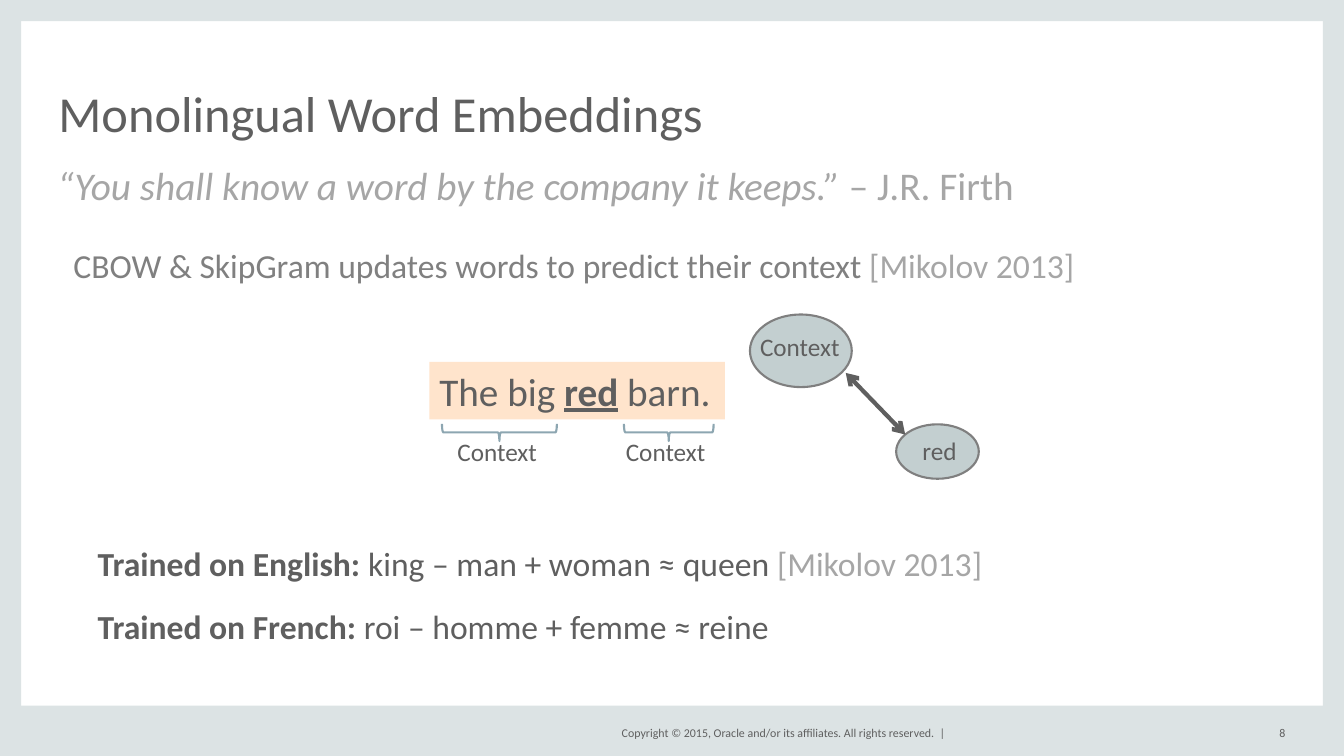
from lxml.etree import SubElement
from pptx import Presentation
from pptx.dml.color import RGBColor
from pptx.enum.shapes import MSO_CONNECTOR, MSO_SHAPE
from pptx.enum.text import MSO_ANCHOR, PP_ALIGN
from pptx.oxml.ns import qn
from pptx.util import Inches, Pt

FONT = "Calibri"
COLORS = {
    "frame": "DCE3E4", "text": "5F5F5F", "body": "808080", "muted": "A6A6A6",
    "highlight": "FFE4CC", "brace": "8DA6B1", "bubble": "C3CFD0", "outline": "7F7F7F",
}
PADDED = (0.1, 0.05, 0.1, 0.05)
LABEL = (0.1, 0.05, 0, 0.05)
FLUSH = (0, 0, 0, 0)

# Boxes are left, top, width, height in percent of the slide.
FRAME = [(0, 0, 1.58, 100), (98.42, 0, 1.58, 100), (0, 93.33, 100, 6.67), (0, 0, 100, 2.8)]
TITLE = ((4.35, 5.87, 91.28, 12.93), [("Monolingual Word Embeddings", "text", "")])
FOOTERS = [
    ((44.1, 95.6, 26.25, 2.67),
     "Copyright © 2015, Oracle and/or its affiliates. All rights reserved.  |"),
    ((92.48, 95.6, 3.15, 2.67), "8"),
]
STATEMENTS = [
    ((3.53, 20.67, 74.25, 7.6), 28,
     [("“You shall know a word by the company it keeps.” ", "muted", "i"),
      ("– J.R. Firth", "muted", "")]),
    ((4.73, 31.73, 77.18, 6.67), 24,
     [("CBOW & SkipGram updates words to predict their context ", "body", ""),
      ("[Mikolov 2013]", "muted", "")]),
    ((6.53, 71.2, 68.25, 6.67), 24,
     [("Trained on English: ", "text", "b"), ("king – man + woman ≈ queen ", "text", ""),
      ("[Mikolov 2013]", "muted", "")]),
    ((6.53, 79.47, 68.25, 6.67), 24,
     [("Trained on French: ", "text", "b"), ("roi – homme + femme ≈ reine", "text", "")]),
]
SENTENCE = ((31.95, 47.87, 21.98, 7.6),
            [("The big ", "text", ""), ("red", "text", "bu"), (" barn.", "text", "")])
BRACE_CENTER, BRACE_THICKNESS = 57.2, 1.28
BRACES = [(37.16, 15.2, 33.3), (49.76, 11.87, 45.83)]
BUBBLES = [
    ((55.8, 41.6, 7.58, 9.6), (56.55, 44.27, 7.2, 8.67), "Context"),
    ((66.68, 56.13, 6.15, 7.2), (68.63, 58, 4.2, 4.27), "red"),
]
ARROW = (62.93, 49.33, 67.35, 57.47)

presentation = Presentation()
presentation.slide_width = Inches(13.33)
presentation.slide_height = Inches(7.5)
slide = presentation.slides.add_slide(presentation.slide_layouts[6])


def color(name):
    return RGBColor.from_string(COLORS[name])


def place(box):
    sides = (presentation.slide_width, presentation.slide_height) * 2
    return [round(share * side / 100) for share, side in zip(box, sides)]


def add_shape(kind, box, fill=None, line=None):
    shape = slide.shapes.add_shape(kind, *place(box))
    shape.shadow.inherit = False
    if fill:
        shape.fill.solid()
        shape.fill.fore_color.rgb = color(fill)
    else:
        shape.fill.background()
    if line:
        shape.line.color.rgb = color(line)
        shape.line.width = Pt(1.5)
    else:
        shape.line.fill.background()
    return shape


def write(shape, runs, size, insets=PADDED, anchor=MSO_ANCHOR.TOP,
          align=PP_ALIGN.LEFT, spacing=1.0):
    frame = shape.text_frame
    frame.word_wrap = True
    frame.vertical_anchor = anchor
    (frame.margin_left, frame.margin_top,
     frame.margin_right, frame.margin_bottom) = map(Inches, insets)
    paragraph = frame.paragraphs[0]
    paragraph.alignment = align
    paragraph.line_spacing = spacing
    for text, tone, style in runs:
        run = paragraph.add_run()
        run.text = text
        run.font.name = FONT
        run.font.size = Pt(size)
        run.font.color.rgb = color(tone)
        run.font.bold = "b" in style
        run.font.italic = "i" in style
        run.font.underline = "u" in style


def add_text(box, runs, size, **layout):
    write(slide.shapes.add_textbox(*place(box)), runs, size, **layout)


def add_double_arrow(ends):
    arrow = slide.shapes.add_connector(MSO_CONNECTOR.STRAIGHT, *place(ends))
    arrow.line.color.rgb = color("text")
    arrow.line.width = Pt(3)
    line = arrow.line._get_or_add_ln()
    for end in ("a:headEnd", "a:tailEnd"):
        SubElement(line, qn(end), type="arrow")
    SubElement(arrow._element.spPr, qn("a:effectLst"))


for box in FRAME:
    add_shape(MSO_SHAPE.RECTANGLE, box, "frame")
for box, text in FOOTERS:
    add_text(box, [(text, "text", "")], 8.5, insets=FLUSH,
             anchor=MSO_ANCHOR.MIDDLE, align=PP_ALIGN.RIGHT)
add_text(*TITLE, 36, insets=FLUSH, anchor=MSO_ANCHOR.BOTTOM, spacing=0.8)
for box, size, runs in STATEMENTS:
    add_text(box, runs, size)

sentence_box, sentence_runs = SENTENCE
write(add_shape(MSO_SHAPE.RECTANGLE, sentence_box, "highlight"), sentence_runs, 28)
for center, length, label_left in BRACES:
    brace_box = (center - BRACE_THICKNESS / 2, BRACE_CENTER - length / 2,
                 BRACE_THICKNESS, length)
    add_shape(MSO_SHAPE.LEFT_BRACE, brace_box, line="brace").rotation = 270
    add_text((label_left, 57.07, 7.58, 5.33), [("Context", "text", "")], 18, insets=LABEL)

for bubble_box, label_box, word in BUBBLES:
    add_shape(MSO_SHAPE.OVAL, bubble_box, "bubble", "outline")
    add_text(label_box, [(word, "text", "")], 18, insets=FLUSH, spacing=0.9)
add_double_arrow(ARROW)

presentation.save("out.pptx")
